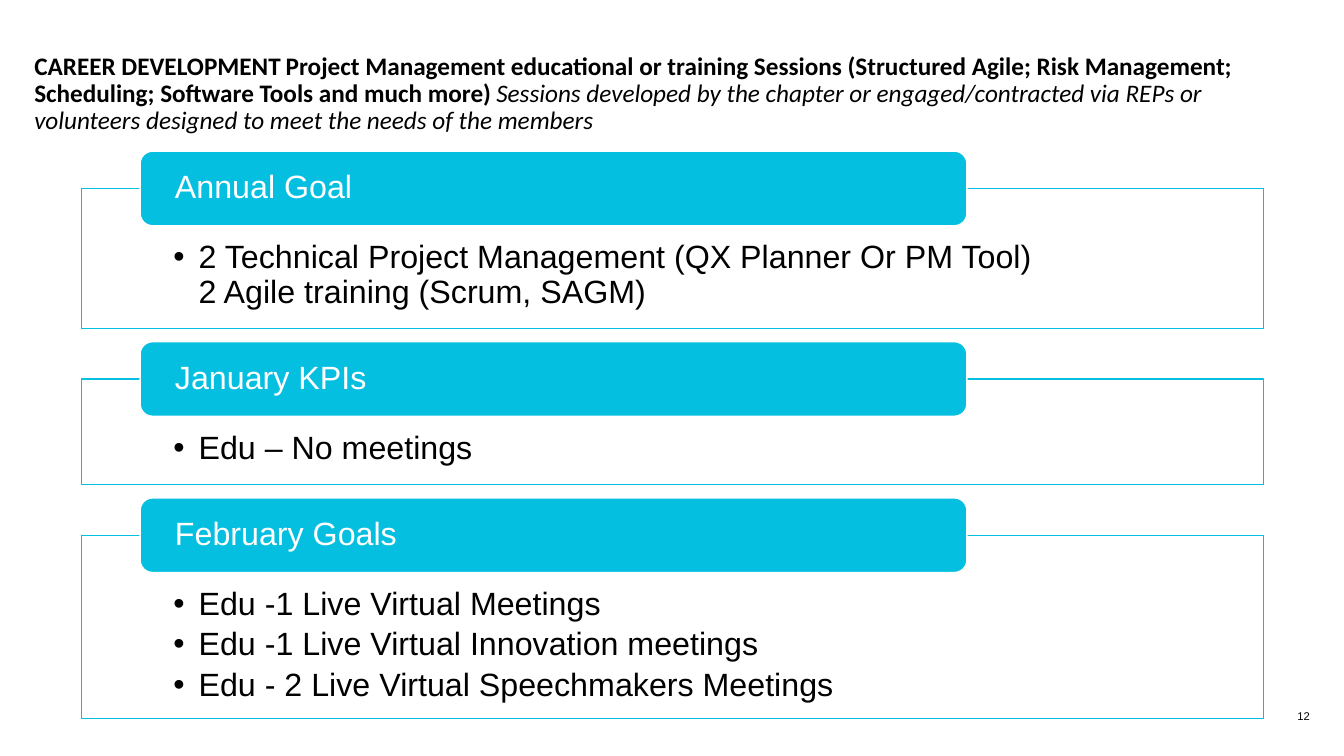
from dataclasses import dataclass

from lxml import etree
from pptx import Presentation
from pptx.dml.color import RGBColor
from pptx.enum import shapes, text
from pptx.oxml import ns
from pptx.util import Inches, Pt


@dataclass(frozen=True)
class Theme:
    accent: RGBColor = RGBColor(0x05, 0xBF, 0xE0)
    white: RGBColor = RGBColor(0xFF, 0xFF, 0xFF)
    black: RGBColor = RGBColor(0, 0, 0)
    title_size: int = 18
    title_gap_size: int = 12
    body_size: int = 23
    number_size: int = 8


theme = Theme()


def write(para, words, size, font="Arial", color=theme.black, bold=False, italic=False):
    """Append formatted text to a paragraph, with a line break at each newline."""
    for index, line in enumerate(words.split("\n")):
        if index:
            para.add_line_break()
        span = para.add_run()
        span.text = line
        span.font.name = font
        span.font.size = Pt(size)
        span.font.color.rgb = color
        span.font.bold = bold
        span.font.italic = italic


def set_frame(box, anchor, left=0, top=0, right=0, bottom=0):
    """Set wrapping, anchor and insets in inches; return the text frame."""
    frame = box.text_frame
    frame.word_wrap = True
    frame.vertical_anchor = anchor
    frame.margin_left, frame.margin_right = Inches(left), Inches(right)
    frame.margin_top, frame.margin_bottom = Inches(top), Inches(bottom)
    return frame


deck = Presentation()
deck.slide_width, deck.slide_height = Inches(13.33), Inches(7.5)
page = deck.slides.add_slide(deck.slide_layouts[6])

# Title
title = page.shapes.add_textbox(Inches(0.34), Inches(0.36), Inches(12.64), Inches(1.15))
para = set_frame(title, text.MSO_ANCHOR.MIDDLE).paragraphs[0]
para.line_spacing = 0.9
title_parts = [
    ("CAREER DEVELOPMENT", {"bold": True}),
    ("Project Management educational or training Sessions (Structured Agile; "
     "Risk Management; Scheduling; Software Tools and much more)", {"bold": True}),
    ("Sessions developed by the chapter or engaged/contracted via REPs or "
     "volunteers designed to meet the needs of the members", {"italic": True}),
]
for index, (words, style) in enumerate(title_parts):
    if index:
        write(para, " ", theme.title_gap_size)
    write(para, words, theme.title_size, font="Calibri", **style)

# Goal sections: an outlined panel with a heading tab across its top edge
sections = [
    ("Annual Goal", 1.39,
     ["2 Technical Project Management (QX Planner Or PM Tool)\n2 Agile training (Scrum, SAGM)"]),
    ("January KPIs", 1.05, ["Edu – No meetings"]),
    ("February Goals", 1.82,
     ["Edu -1 Live Virtual Meetings",
      "Edu -1 Live Virtual Innovation meetings",
      "Edu - 2 Live Virtual Speechmakers Meetings"]),
]
tab_height = 0.74
section_gap = 0.5
panel_top = 1.87

for heading, panel_height, items in sections:
    panel = page.shapes.add_shape(shapes.MSO_SHAPE.RECTANGLE, Inches(0.81), Inches(panel_top),
                                  Inches(11.72), Inches(panel_height))
    tab = page.shapes.add_shape(shapes.MSO_SHAPE.ROUNDED_RECTANGLE, Inches(1.39),
                                Inches(panel_top - tab_height / 2),
                                Inches(8.2), Inches(tab_height))
    for box, fill, line in ((panel, theme.white, theme.accent), (tab, theme.accent, theme.white)):
        box.shadow.inherit = False
        box.fill.solid()
        box.fill.fore_color.rgb = fill
        box.line.color.rgb = line
        box.line.width = Pt(1)
    panel_color = panel.fill._xPr.find(".//" + ns.qn("a:srgbClr"))
    etree.SubElement(panel_color, ns.qn("a:alpha"), val="90000")

    frame = set_frame(panel, text.MSO_ANCHOR.TOP, 0.91, 0.52, 0.91, 0.18)
    for index, item in enumerate(items):
        para = frame.add_paragraph() if index else frame.paragraphs[0]
        para.alignment = text.PP_ALIGN.LEFT
        para.line_spacing = 0.9
        para.space_after = Pt(4)
        layout = para._p.get_or_add_pPr()
        layout.set("marL", str(Inches(0.25)))
        layout.set("indent", str(Inches(-0.25)))
        etree.SubElement(layout, ns.qn("a:buFont"), typeface="Arial")
        etree.SubElement(layout, ns.qn("a:buChar"), char="•")
        write(para, item, theme.body_size)

    para = set_frame(tab, text.MSO_ANCHOR.MIDDLE, left=0.31, right=0.31).paragraphs[0]
    para.alignment = text.PP_ALIGN.LEFT
    para.line_spacing = 0.9
    write(para, heading, theme.body_size, color=theme.white)

    panel_top += panel_height + section_gap

# Page number
number = page.shapes.add_textbox(Inches(12.54), Inches(6.95), Inches(0.45), Inches(0.22))
para = set_frame(number, text.MSO_ANCHOR.BOTTOM).paragraphs[0]
para.alignment = text.PP_ALIGN.RIGHT
write(para, "12", theme.number_size)

deck.save("out.pptx")
